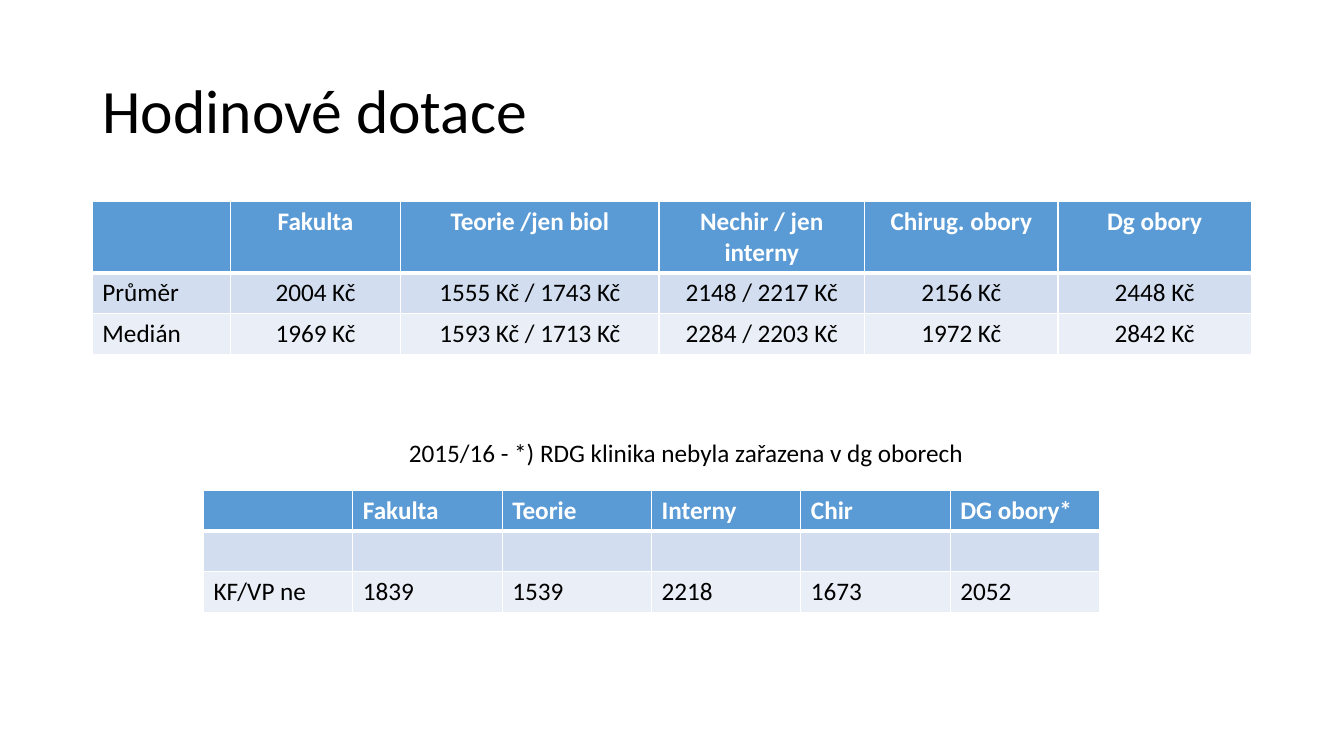
from pptx import Presentation
from pptx.dml.color import RGBColor
from pptx.enum.text import MSO_ANCHOR, MSO_AUTO_SIZE, PP_ALIGN
from pptx.util import Pt
from lxml.etree import SubElement
from pptx.oxml.ns import qn

BLACK = RGBColor(0x00, 0x00, 0x00)
WHITE = RGBColor(0xFF, 0xFF, 0xFF)
BLUE = RGBColor(0x5B, 0x9B, 0xD5)
BAND_DARK = RGBColor(0xD2, 0xDE, 0xEF)
BAND_LIGHT = RGBColor(0xEA, 0xEF, 0xF7)


class SlideBuilder:
    font = "Calibri"
    body_size = 18
    title_size = 44

    def __init__(self, prs):
        self.s = prs.slides.add_slide(prs.slide_layouts[5])

    def add_text(self, p, text, size, color=BLACK, bold=False, align=PP_ALIGN.LEFT):
        p.alignment = align
        if not text:
            p.font.size = Pt(size)
            return
        r = p.add_run()
        r.text = text
        r.font.name, r.font.size, r.font.bold = self.font, Pt(size), bold
        r.font.color.rgb = color

    def title(self, text, x, y, w, h):
        sp = self.s.shapes.title
        sp.left, sp.top, sp.width, sp.height = Pt(x), Pt(y), Pt(w), Pt(h)
        tf = sp.text_frame
        tf.word_wrap = True
        tf.auto_size = MSO_AUTO_SIZE.NONE
        tf.vertical_anchor = MSO_ANCHOR.MIDDLE
        p = tf.paragraphs[0]
        p.line_spacing = 0.9
        self.add_text(p, text, self.title_size)

    def label(self, text, x, y, w, h):
        tf = self.s.shapes.add_textbox(Pt(x), Pt(y), Pt(w), Pt(h)).text_frame
        tf.word_wrap = False
        tf.auto_size = MSO_AUTO_SIZE.SHAPE_TO_FIT_TEXT
        self.add_text(tf.paragraphs[0], text, self.body_size)

    def borders(self, cell, top, bottom):
        tc_pr = cell._tc.get_or_add_tcPr()
        for side, width in (("L", 1), ("R", 1), ("T", top), ("B", bottom)):
            ln = SubElement(tc_pr, qn(f"a:ln{side}"), w=str(Pt(width)))
            fill = SubElement(ln, qn("a:solidFill"))
            SubElement(fill, qn("a:srgbClr"), val=str(WHITE))

    def table(self, rows, x, y, widths, heights, value_align):
        tbl = self.s.shapes.add_table(len(rows), len(widths), Pt(x), Pt(y),
                                      Pt(sum(widths)), Pt(sum(heights))).table
        for col, width in zip(tbl.columns, widths):
            col.width = Pt(width)
        for i, row in enumerate(rows):
            tbl.rows[i].height = Pt(heights[i])
            head = i == 0
            band = BLUE if head else BAND_DARK if i % 2 else BAND_LIGHT
            for j, text in enumerate(row):
                cell = tbl.cell(i, j)
                self.borders(cell, 3 if i == 1 else 1, 3 if head else 1)
                cell.fill.solid()
                cell.fill.fore_color.rgb = band
                self.add_text(cell.text_frame.paragraphs[0], text, self.body_size,
                              WHITE if head else BLACK, head,
                              value_align if j else PP_ALIGN.LEFT)


def main():
    prs = Presentation()
    prs.slide_width, prs.slide_height = Pt(960), Pt(540)
    b = SlideBuilder(prs)

    # Title
    b.title("Hodinové dotace", 66, 28.75, 828, 104.4)

    # Hourly rates by field
    b.table([
        ["", "Fakulta", "Teorie /jen biol", "Nechir / jen interny", "Chirug. obory", "Dg obory"],
        ["Průměr", "2004 Kč", "1555 Kč / 1743 Kč", "2148 / 2217 Kč", "2156 Kč", "2448 Kč"],
        ["Medián", "1969 Kč", "1593 Kč / 1713 Kč", "2284 / 2203 Kč", "1972 Kč", "2842 Kč"],
    ], 66, 143.75, [98.6, 121.7, 184.4, 147, 138.1, 138.1], [50.4, 29.2, 29.2],
        PP_ALIGN.CENTER)

    # Comparison with 2015/16
    b.table([
        ["", "Fakulta", "Teorie", "Interny", "Chir", "DG obory*"],
        [""] * 6,
        ["KF/VP ne", "1839", "1539", "2218", "1673", "2052"],
    ], 145.4, 350, [106.67] * 6, [29.2] * 3, PP_ALIGN.LEFT)
    b.label("2015/16 - *) RDG klinika nebyla zařazena v dg oborech", 285, 309, 415.4, 29.1)

    prs.save("out.pptx")


if __name__ == "__main__":
    main()
